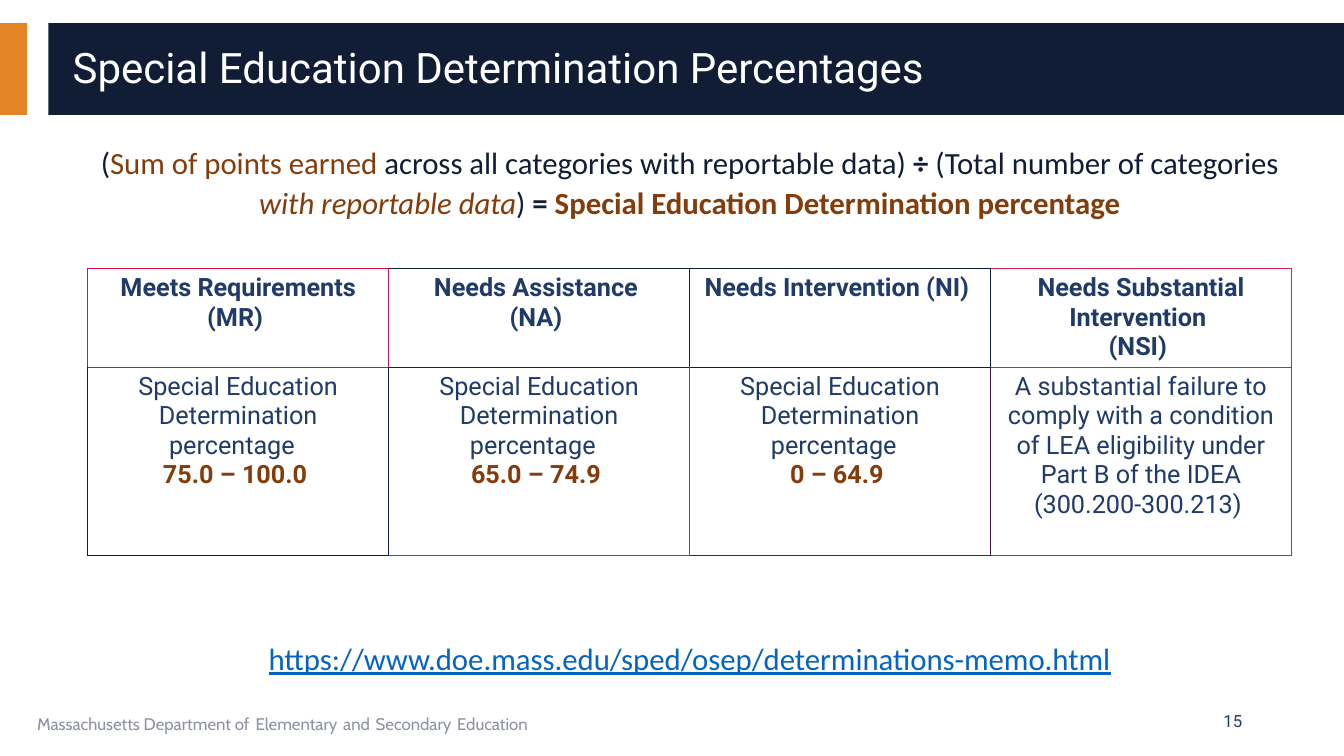
from dataclasses import dataclass

from lxml.etree import SubElement
from pptx import Presentation
from pptx.dml.color import RGBColor
from pptx.enum.shapes import MSO_SHAPE as Shape
from pptx.enum.text import MSO_ANCHOR as Anchor, MSO_AUTO_SIZE as AutoSize, PP_ALIGN as Align
from pptx.oxml.ns import qn
from pptx.util import Inches, Pt


@dataclass(frozen=True)
class Theme:
    navy: str = "101D35"
    orange: str = "E38526"
    blue: str = "203B6A"
    brown: str = "843C0B"
    link: str = "0563C1"
    grey: str = "8D92A1"
    white: str = "FFFFFF"
    heading_font: str = "Roboto"
    body_font: str = "Calibri"
    footer_font: str = "Cabin"
    title_size: int = 30
    body_size: int = 22
    table_size: int = 18
    small_size: int = 12


THEME = Theme()

FORMULA = [
    ("(", THEME.navy, ""),
    ("Sum of points earned ", THEME.brown, ""),
    ("across all categories with reportable data) ", THEME.navy, ""),
    ("÷", THEME.navy, "bold"),
    (" (Total number of categories ", THEME.navy, ""),
    ("with reportable data", THEME.brown, "italic"),
    (") ", THEME.navy, ""),
    ("= ", THEME.navy, "bold"),
    ("Special Education Determination percentage", THEME.brown, "bold"),
]
LINK = "https://www.doe.mass.edu/sped/osep/determinations-memo.html"

PERCENTAGE = "Special Education Determination percentage  "
LEVELS = [
    ("Meets Requirements (MR) ", PERCENTAGE, "75.0 – 100.0 "),
    ("Needs Assistance \v(NA) ", PERCENTAGE, "65.0 – 74.9 "),
    ("Needs Intervention (NI) ", PERCENTAGE, "0 – 64.9 "),
    ("Needs Substantial Intervention \v(NSI) ",
     "A substantial failure to comply with a condition of LEA eligibility "
     "under Part B of the IDEA (300.200-300.213) ", ""),
]
BORDERS = [["D0114C", "101F4C", "101B4C", "D0204C"],
           ["101A4C", "D0204C", "50194C", "D01C4C"]]
ROW_HEIGHTS = [0.98, 1.87]


def set_font(font, name, size, color, bold=False):
    font.name, font.size, font.bold = name, Pt(size), bold
    font.color.rgb = RGBColor.from_string(color)


def place(shape, box):
    shape.left, shape.top, shape.width, shape.height = map(Inches, box)


def add_bar(page, box, color):
    """Add a plain rectangle behind the placeholders."""
    bar = page.shapes.add_shape(Shape.RECTANGLE, *map(Inches, box))
    bar.shadow.inherit = False
    bar.fill.solid()
    bar.fill.fore_color.rgb = RGBColor.from_string(color)
    bar.line.fill.background()
    page.shapes._spTree.insert(2, bar._element)


def add_header(page, box, text):
    left, top, width, height = box
    add_bar(page, (0, top, 0.27, height), THEME.orange)
    add_bar(page, box, THEME.navy)
    title = page.shapes.title
    place(title, (left + 0.14, top + 0.09, width - 0.42, height - 0.17))
    frame = title.text_frame
    frame.auto_size = AutoSize.NONE
    frame.vertical_anchor = Anchor.MIDDLE
    para = frame.paragraphs[0]
    para.text = text
    para.alignment = Align.LEFT
    para.line_spacing = 0.9
    set_font(para.font, THEME.heading_font, THEME.title_size, THEME.white)


def format_body_paragraph(para, color, before):
    properties = para._p.get_or_add_pPr()
    properties.set("marL", "0")
    properties.set("indent", "0")
    SubElement(properties, qn("a:buNone"))
    para.alignment = Align.CENTER
    para.line_spacing = 1.07
    para.space_before, para.space_after = Pt(before), Pt(8)
    set_font(para.font, THEME.body_font, THEME.body_size, color)


def fill_body(page, box):
    """Set the formula at the top of the body and the link at its foot."""
    body = page.placeholders[1]
    place(body, box)
    frame = body.text_frame
    frame.auto_size = AutoSize.NONE
    formula = frame.paragraphs[0]
    format_body_paragraph(formula, THEME.navy, 0)
    for text, color, style in FORMULA:
        span = formula.add_run()
        span.text = text
        span.font.color.rgb = RGBColor.from_string(color)
        if style:
            setattr(span.font, style, True)
    link = frame.add_paragraph()
    link.text = LINK
    format_body_paragraph(link, THEME.link, 290)
    link.runs[0].font.underline = True


def set_borders(cell, **colors):
    properties = cell._tc.get_or_add_tcPr()
    for side in "LRTB":
        line = SubElement(properties, qn(f"a:ln{side}"), w=str(Pt(0.5)))
        fill = SubElement(line, qn("a:solidFill"))
        SubElement(fill, qn("a:srgbClr"), val=colors[side])


def write_cell(cell, lines):
    """Write (text, color, bold) lines as centred paragraphs."""
    frame = cell.text_frame
    for index, (text, color, bold) in enumerate(lines):
        para = frame.add_paragraph() if index else frame.paragraphs[0]
        para.text = text
        para.alignment = Align.CENTER
        set_font(para.font, THEME.heading_font, THEME.table_size, color, bold)


def add_levels_table(page, box):
    frame = page.shapes.add_table(2, len(LEVELS), *map(Inches, box))
    table = frame.table
    table.first_row = table.horz_banding = False
    for row, height in zip(table.rows, ROW_HEIGHTS):
        row.height = Inches(height)
    for col, (level, criterion, score) in enumerate(LEVELS):
        write_cell(table.cell(0, col), [(level, THEME.blue, True)])
        lines = [(criterion, THEME.blue, False)]
        if score:
            lines.append((score, THEME.brown, True))
        write_cell(table.cell(1, col), lines)
        for row in range(2):
            cell, own = table.cell(row, col), BORDERS[row][col]
            set_borders(cell, R=own, B=own,
                        L=BORDERS[row][max(col - 1, 0)], T=BORDERS[0][col])
            cell.fill.background()


def add_footer(page, box, number):
    left, top, width, height = box
    credit = page.shapes.add_textbox(*map(Inches, (left, top, 8.44, height)))
    credit.text_frame.word_wrap = True
    para = credit.text_frame.paragraphs[0]
    set_font(para.font, THEME.footer_font, THEME.small_size, THEME.grey)
    for index, text in enumerate(
            ["Massachusetts Department of", "Elementary", "and", "Secondary", "Education"]):
        if index:
            gap = para.add_run()
            gap.text = " "
            gap.font.size = Pt(18)
        para.add_run().text = text

    counter = page.shapes.add_textbox(*map(Inches, (left + width - 3, top, 3, height)))
    counter.text_frame.word_wrap = True
    counter.text_frame.vertical_anchor = Anchor.MIDDLE
    para = counter.text_frame.paragraphs[0]
    para.text = number
    para.alignment = Align.RIGHT
    set_font(para.font, THEME.heading_font, THEME.small_size, THEME.blue)


def main():
    deck = Presentation()
    deck.slide_width, deck.slide_height = Inches(13.33), Inches(7.5)
    page = deck.slides.add_slide(deck.slide_layouts[1])
    add_header(page, (0.48, 0.23, 12.86, 0.91), "Special Education Determination Percentages")
    fill_body(page, (0.62, 1.35, 12.44, 5.52))
    add_levels_table(page, (0.87, 2.66, 11.94, sum(ROW_HEIGHTS)))
    add_footer(page, (0.27, 6.95, 12.15, 0.4), "15")
    deck.save("out.pptx")


if __name__ == "__main__":
    main()
